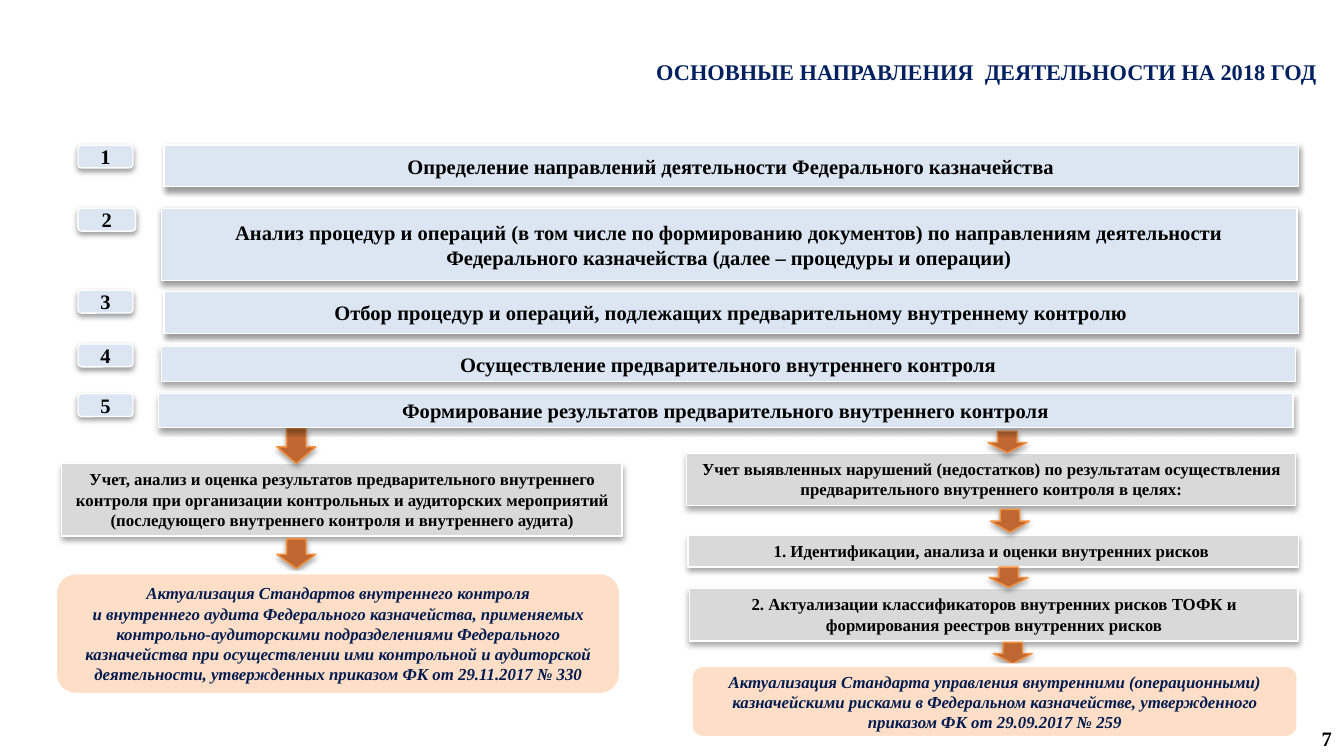
"""Build the slide on the main directions of activity for 2018."""
import pptx
import pptx.dml.color
import pptx.enum.shapes
import pptx.enum.text
import pptx.oxml
import pptx.oxml.ns
import pptx.util
from pptx.util import Inches

FONT = "Times New Roman"
COLORS = {
    "title": "002060",
    "text": "000000",
    "step": "DCE6F2",
    "account": "D9D9D9",
    "outcome": "FEDEC6",
    "outcome_text": "001A4F",
    "arrow": "BE6732",
    "arrow_line": "F69240",
    "border": "FFFFFF",
}
SHAPES = pptx.enum.shapes.MSO_SHAPE
ALIGN = pptx.enum.text.PP_ALIGN
ANCHOR = pptx.enum.text.MSO_ANCHOR

STEPS = [
    ("Определение направлений деятельности Федерального казначейства",
     (0.58, 1.08, 0.41, 0.17), (1.22, 1.08, 8.44, 0.31)),
    ("Анализ процедур и операций (в том числе по формированию документов) по направлениям "
     "деятельности Федерального казначейства (далее – процедуры и операции)",
     (0.58, 1.55, 0.43, 0.17), (1.2, 1.55, 8.45, 0.54)),
    ("Отбор процедур и операций, подлежащих предварительному внутреннему контролю",
     (0.58, 2.16, 0.41, 0.17), (1.22, 2.17, 8.44, 0.31)),
    ("Осуществление предварительного внутреннего контроля",
     (0.58, 2.56, 0.41, 0.17), (1.2, 2.58, 8.44, 0.26)),
    ("Формирование результатов предварительного внутреннего контроля",
     (0.58, 2.93, 0.41, 0.17), (1.18, 2.93, 8.44, 0.25)),
]
ACCOUNTS = [
    ("Учет, анализ и оценка результатов предварительного внутреннего контроля при организации "
     "контрольных и аудиторских мероприятий (последующего внутреннего контроля и внутреннего "
     "аудита)", (0.46, 3.45, 4.17, 0.54)),
    ("Учет выявленных нарушений (недостатков) по результатам осуществления предварительного "
     "внутреннего контроля в целях:", (5.11, 3.37, 4.53, 0.39)),
    ("1. Идентификации, анализа и оценки внутренних рисков ", (5.12, 3.98, 4.54, 0.24)),
    ("2. Актуализации классификаторов внутренних рисков ТОФК и формирования реестров "
     "внутренних рисков", (5.13, 4.38, 4.53, 0.39)),
]
OUTCOMES = [
    ("Актуализация Стандартов внутреннего контроля\nи внутреннего аудита Федерального "
     "казначейства, применяемых контрольно-аудиторскими подразделениями Федерального "
     "казначейства при осуществлении ими контрольной и аудиторской деятельности, утвержденных "
     "приказом ФК от 29.11.2017 № 330", (0.41, 4.26, 4.21, 0.91)),
    ("Актуализация Стандарта управления внутренними (операционными) казначейскими рисками в "
     "Федеральном казначействе, утвержденного приказом ФК от 29.09.2017 № 259",
     (5.14, 4.95, 4.52, 0.54)),
]
ARROWS = [
    (2.06, 3.19, 0.26), (2.06, 4.01, 0.22), (7.35, 3.21, 0.16),
    (7.37, 3.79, 0.17), (7.36, 4.22, 0.15), (7.39, 4.78, 0.16),
]


def rgb(name):
    return pptx.dml.color.RGBColor.from_string(COLORS[name])


def write_text(shape, text, size, color="text", align=ALIGN.CENTER,
               anchor=ANCHOR.MIDDLE, italic=False):
    frame = shape.text_frame
    frame.word_wrap = True
    frame.auto_size = pptx.enum.text.MSO_AUTO_SIZE.NONE
    frame.vertical_anchor = anchor
    frame.margin_left = frame.margin_right = Inches(0.09)
    frame.margin_top = frame.margin_bottom = Inches(0.04)
    paragraph = frame.paragraphs[0]
    paragraph.text = text
    paragraph.alignment = align
    paragraph.font.name = FONT
    paragraph.font.size = pptx.util.Pt(size)
    paragraph.font.bold = True
    paragraph.font.italic = italic
    paragraph.font.color.rgb = rgb(color)


def add_shadow(shape, distance, opacity):
    shadow = pptx.oxml.parse_xml(
        f'<a:outerShdw {pptx.oxml.ns.nsdecls("a")} blurRad="{pptx.util.Pt(3.1)}" '
        f'dist="{pptx.util.Pt(distance)}" dir="5400000" rotWithShape="0">'
        f'<a:srgbClr val="000000"><a:alpha val="{opacity * 1000}"/></a:srgbClr></a:outerShdw>')
    shape._element.spPr.find(pptx.oxml.ns.qn("a:effectLst")).append(shadow)


def add_box(slide, kind, place, fill, line="border", line_width=0.75):
    shape = slide.shapes.add_shape(kind, *map(Inches, place))
    shape.shadow.inherit = False
    shape.fill.solid()
    shape.fill.fore_color.rgb = rgb(fill)
    shape.line.color.rgb = rgb(line)
    shape.line.width = pptx.util.Pt(line_width)
    return shape


def add_step_box(slide, kind, text, place):
    box = add_box(slide, kind, place, "step")
    add_shadow(box, 1.6, 38)
    write_text(box, text, 11)


def add_account(slide, text, place):
    box = add_box(slide, SHAPES.RECTANGLE, place, "account")
    add_shadow(box, 1.8, 35)
    write_text(box, text, 9, anchor=ANCHOR.TOP)


def add_outcome(slide, text, place):
    box = add_box(slide, SHAPES.ROUNDED_RECTANGLE, place, "outcome", line_width=2)
    write_text(box, text, 9, "outcome_text", italic=True)


def add_arrow(slide, left, top, height):
    arrow = add_box(slide, SHAPES.DOWN_ARROW, (left, top, 0.29, height), "arrow", "arrow_line")
    arrow.adjustments[1] = 0.48
    add_shadow(arrow, 1.6, 38)


def add_title(slide, text):
    title = slide.shapes.title
    title.left, title.top, title.width, title.height = map(Inches, (3.17, 0.19, 6.72, 0.68))
    write_text(title, text, 12, "title", ALIGN.RIGHT)


def add_page_number(slide, number):
    box = slide.shapes.add_textbox(*map(Inches, (7.67, 5.34, 2.33, 0.3)))
    write_text(box, str(number), 11, align=ALIGN.RIGHT)


def main():
    presentation = pptx.Presentation()
    presentation.slide_width = Inches(10)
    presentation.slide_height = Inches(10 * 9 / 16)
    slide = presentation.slides.add_slide(presentation.slide_layouts[5])
    add_title(slide, "ОСНОВНЫЕ НАПРАВЛЕНИЯ  ДЕЯТЕЛЬНОСТИ НА 2018 ГОД")
    for text, place in ACCOUNTS:
        add_account(slide, text, place)
    for left, top, height in ARROWS:
        add_arrow(slide, left, top, height)
    for text, place in OUTCOMES:
        add_outcome(slide, text, place)
    for number, (text, badge_place, bar_place) in enumerate(STEPS, 1):
        add_step_box(slide, SHAPES.ROUNDED_RECTANGLE, str(number), badge_place)
        add_step_box(slide, SHAPES.RECTANGLE, text, bar_place)
    add_page_number(slide, 7)
    presentation.save("out.pptx")


if __name__ == "__main__":
    main()
